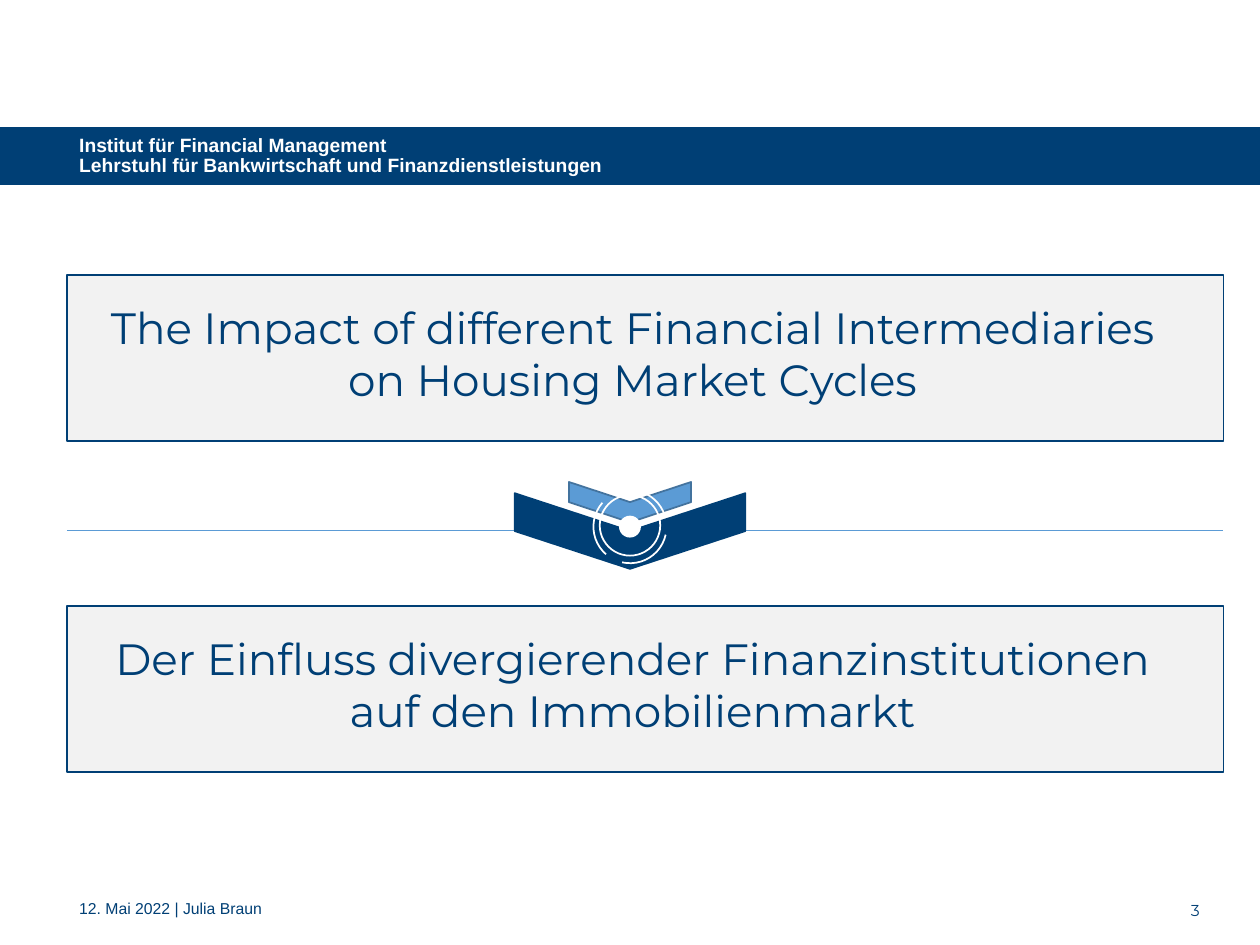
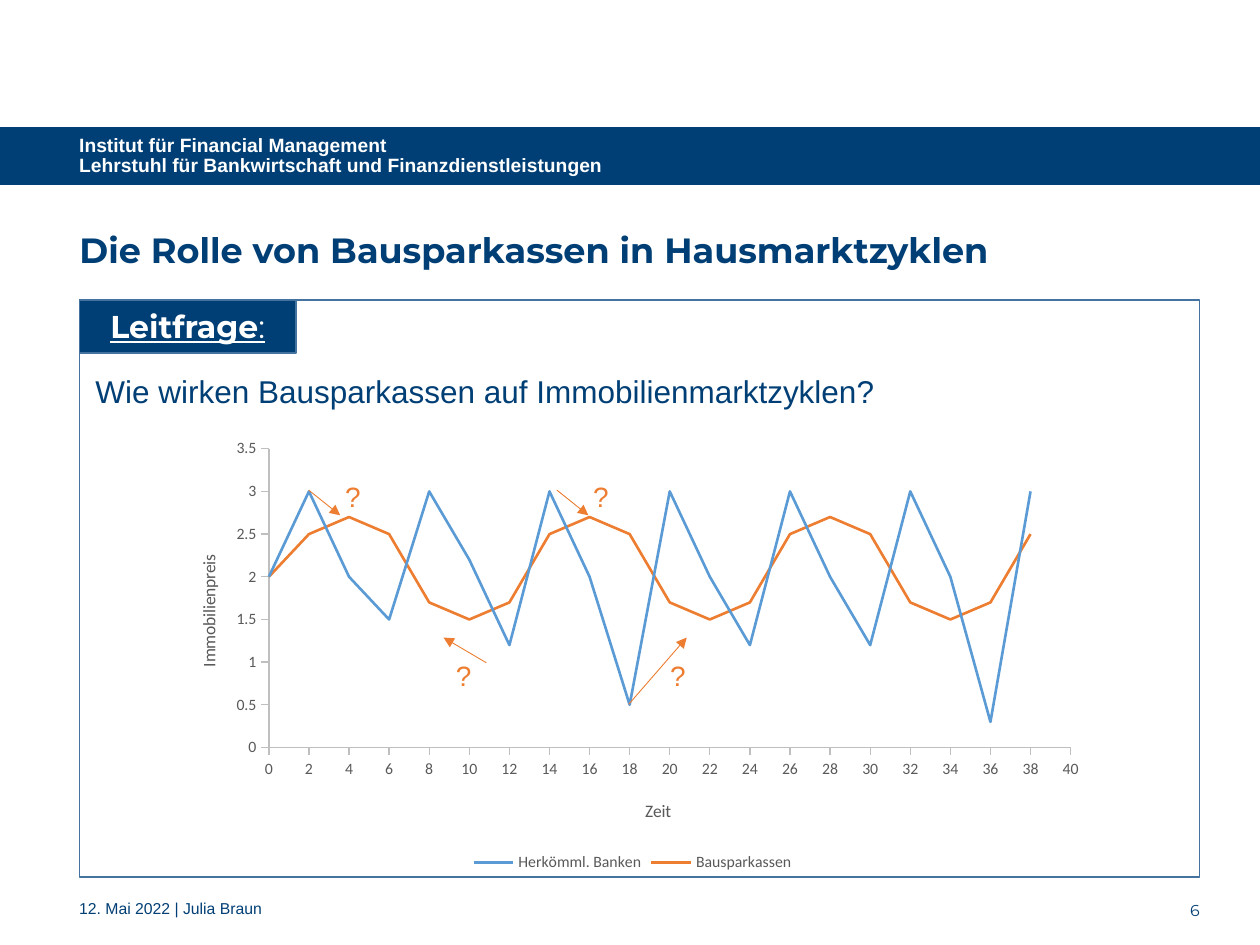
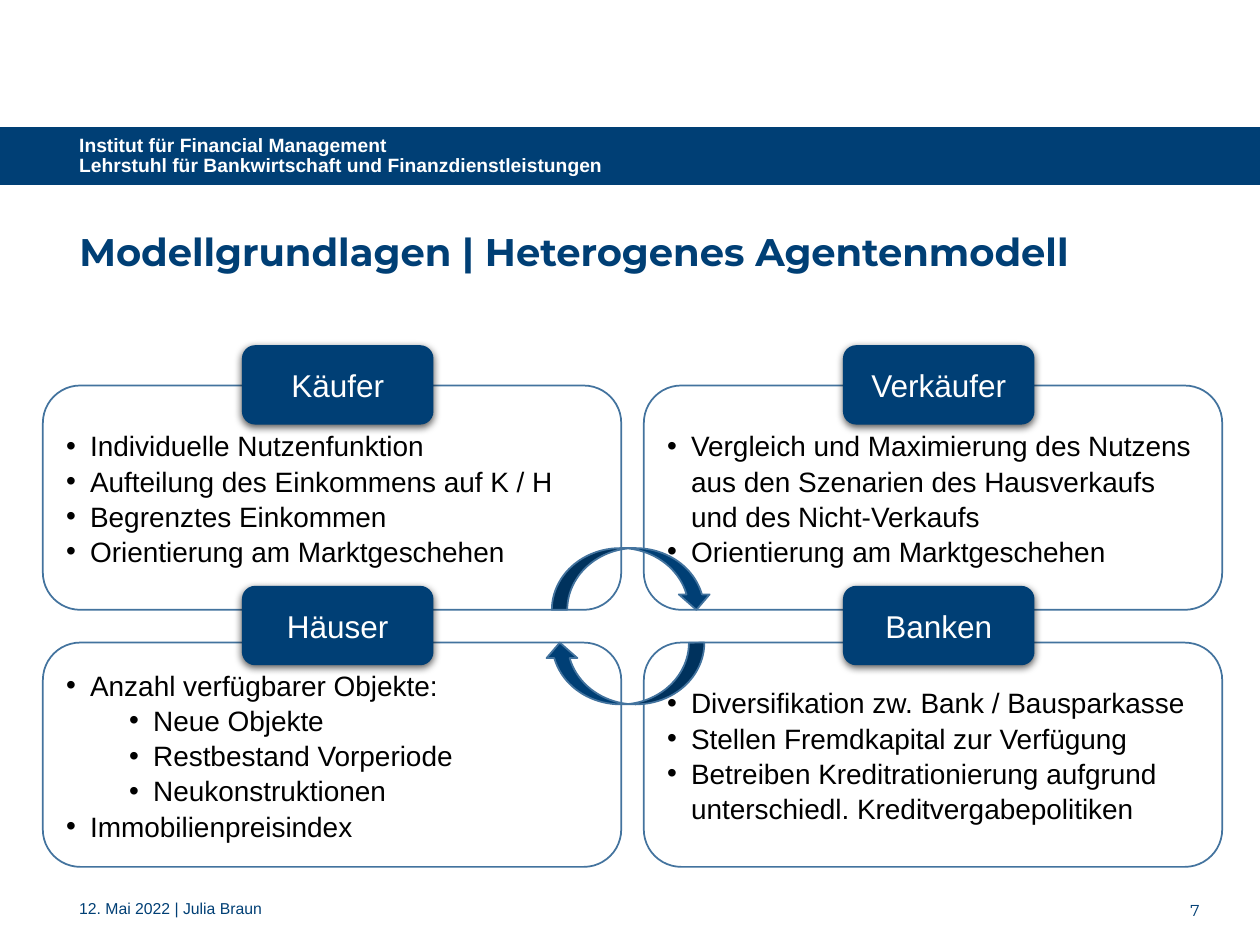
import pptx
import pptx.chart.data
import pptx.dml.color
import pptx.enum.chart
import pptx.enum.shapes
import pptx.enum.text
import pptx.oxml
import pptx.oxml.ns
import pptx.oxml.xmlchemy
import pptx.util

Inches = pptx.util.Inches
Pt = pptx.util.Pt
RGBColor = pptx.dml.color.RGBColor
SHAPE = pptx.enum.shapes.MSO_SHAPE
ANCHOR = pptx.enum.text.MSO_ANCHOR
ALIGN = pptx.enum.text.PP_ALIGN
CHART = pptx.enum.chart

NAVY = RGBColor(0x00, 0x3F, 0x75)
BLUE = RGBColor(0x5B, 0x9B, 0xD5)
EDGE = RGBColor(0x43, 0x73, 0x9E)
ORANGE = RGBColor(0xED, 0x7D, 0x31)
PALE = RGBColor(0xF2, 0xF2, 0xF2)
GREY = RGBColor(0x59, 0x59, 0x59)
AXIS = RGBColor(0xBF, 0xBF, 0xBF)
WHITE = RGBColor(0xFF, 0xFF, 0xFF)
BLACK = RGBColor(0x00, 0x00, 0x00)

TITLE_SLIDE, TITLE_ONLY = 0, 5
INSTITUTE = ["Institut für Financial Management",
             "Lehrstuhl für Bankwirtschaft und Finanzdienstleistungen"]
FOOTER = "12. Mai 2022 | Julia Braun"


def apply(obj, values):
    for name, value in values.items():
        setattr(obj, name, value)


def style_font(font, color, size, name="Arial", **values):
    apply(font, dict(values, name=name, size=Pt(size)))
    font.color.rgb = color


def add_xml(parent, tag, **attrs):
    el = pptx.oxml.xmlchemy.OxmlElement(tag)
    for name, value in attrs.items():
        el.set(name, str(value))
    parent.append(el)
    return el


def set_layout(el, index, **values):
    old = el.find(pptx.oxml.ns.qn("c:layout"))
    if old is not None:
        el.remove(old)
    layout = pptx.oxml.xmlchemy.OxmlElement("c:layout")
    manual = add_xml(layout, "c:manualLayout")
    for name, value in values.items():
        add_xml(manual, f"c:{name}", val=value)
    el.insert(index, layout)


class Deck:
    def __init__(self):
        self.prs = pptx.Presentation()
        apply(self.prs, {"slide_width": Inches(10), "slide_height": Inches(7.5)})
        self.s = None

    def slide(self, layout, number):
        self.s = self.prs.slides.add_slide(self.prs.slide_layouts[layout])
        self.shape(SHAPE.RECTANGLE, (0, 1.01, 10, 0.45), NAVY, NAVY, 0.75)
        self.text((0.53, 1.01, 8.98, 0.46), INSTITUTE, WHITE, 11, bold=True,
                  anchor=ANCHOR.MIDDLE, spacing=0.9)
        self.text((0.53, 7.1, 8.09, 0.26), [FOOTER], NAVY, 9, spacing=0.9)
        self.text((8.91, 7.1, 0.71, 0.25), [number], NAVY, 9, name="Montserrat",
                  align=ALIGN.RIGHT)

    def set_lines(self, tf, lines, color, size, anchor=ANCHOR.TOP, align=ALIGN.LEFT,
                  spacing=1.0, **font):
        apply(tf, {"word_wrap": True, "vertical_anchor": anchor,
                   "auto_size": pptx.enum.text.MSO_AUTO_SIZE.NONE})
        for i, line in enumerate(lines):
            p = tf.paragraphs[0] if i == 0 else tf.add_paragraph()
            apply(p, {"alignment": align, "line_spacing": spacing,
                      "space_before": Pt(0), "space_after": Pt(0)})
            r = p.add_run()
            r.text = line
            style_font(r.font, color, size, **font)

    def text(self, box, lines, color, size, **style):
        sp = self.s.shapes.add_textbox(*map(Inches, box))
        self.set_lines(sp.text_frame, lines, color, size, **style)

    def placeholder(self, index, box, line, size, **style):
        sp = self.s.placeholders[index]
        apply(sp, dict(zip(("left", "top", "width", "height"), map(Inches, box))))
        self.set_lines(sp.text_frame, [line], NAVY, size, name="Montserrat", **style)
        self.s.shapes._spTree.append(sp._element)

    def title(self, line, size):
        self.placeholder(0, (0.53, 1.76, 8.98, 0.63), line, size, bold=True)

    def shape(self, kind, box, fill=None, line=None, width=1, rotation=0):
        sp = self.s.shapes.add_shape(kind, *map(Inches, box))
        sp.shadow.inherit = False
        sp.rotation = rotation
        if fill is None:
            sp.fill.background()
        else:
            sp.fill.solid()
            sp.fill.fore_color.rgb = fill
        if line is None:
            sp.line.fill.background()
        else:
            sp.line.color.rgb = line
            sp.line.width = Pt(width)
        return sp

    def line(self, start, end, color, arrow=False):
        c = self.s.shapes.add_connector(pptx.enum.shapes.MSO_CONNECTOR.STRAIGHT,
                                        *map(Inches, start + end))
        c.line.color.rgb = color
        c.line.width = Pt(0.5)
        if arrow:
            add_xml(c.line._get_or_add_ln(), "a:tailEnd", type="triangle")
        add_xml(c._element.spPr, "a:effectLst")

    def label(self, box, line):
        sp = self.shape(SHAPE.ROUNDED_RECTANGLE, box, NAVY)
        effects = sp._element.spPr.find(pptx.oxml.ns.qn("a:effectLst"))
        shadow = add_xml(effects, "a:outerShdw", blurRad=Pt(4.5), dist=Pt(1.5),
                         dir=5400000, algn="ctr", rotWithShape=0)
        add_xml(add_xml(shadow, "a:srgbClr", val=BLACK), "a:alpha", val=63000)
        self.set_lines(sp.text_frame, [line], WHITE, 18, anchor=ANCHOR.MIDDLE,
                       align=ALIGN.CENTER)

    def bullets(self, box, items):
        sp = self.shape(SHAPE.ROUNDED_RECTANGLE, box, line=EDGE)
        self.set_lines(sp.text_frame, [line for _, line in items], BLACK, 16,
                       anchor=ANCHOR.MIDDLE, spacing=1.05)
        for p, (level, _) in zip(sp.text_frame.paragraphs, items):
            p.level = level
            pPr = p._p.get_or_add_pPr()
            pPr.set("marL", str(Inches(0.19 + 0.5 * level)))
            pPr.set("indent", str(Inches(-0.19)))
            add_xml(pPr, "a:buFont", typeface="Arial")
            add_xml(pPr, "a:buChar", char="•")

    def axis(self, axis, title, limit, step, x, y):
        apply(axis, {"minimum_scale": 0, "maximum_scale": limit, "major_unit": step,
                     "has_major_gridlines": False,
                     "major_tick_mark": CHART.XL_TICK_MARK.OUTSIDE,
                     "minor_tick_mark": CHART.XL_TICK_MARK.NONE})
        apply(axis.tick_labels, {"number_format": "General",
                                 "number_format_is_linked": False})
        style_font(axis.tick_labels.font, GREY, 9, "Calibri")
        axis.format.line.color.rgb = AXIS
        axis.format.line.width = Pt(0.75)
        tf = axis.axis_title.text_frame
        tf.text = title
        style_font(tf.paragraphs[0].runs[0].font, GREY, 10, "Calibri", bold=False)
        set_layout(axis.axis_title._element, 1, xMode="edge", yMode="edge", x=x, y=y)
        return tf

    def curves(self, box, xs, series):
        data = pptx.chart.data.XyChartData()
        for name, values, _ in series:
            line = data.add_series(name)
            for x, y in zip(xs, values):
                line.add_data_point(x, y)
        chart = self.s.shapes.add_chart(
            CHART.XL_CHART_TYPE.XY_SCATTER_SMOOTH_NO_MARKERS,
            *map(Inches, box), data).chart
        style_font(chart.font, BLACK, 10, "Calibri")
        apply(chart, {"has_title": False, "has_legend": True})
        apply(chart.legend, {"position": CHART.XL_LEGEND_POSITION.BOTTOM,
                             "include_in_layout": False})
        style_font(chart.legend.font, GREY, 9, "Calibri")
        chart.plots[0].vary_by_categories = False
        for line, (_, _, color) in zip(chart.plots[0].series, series):
            line.smooth = True
            line.marker.style = CHART.XL_MARKER_STYLE.NONE
            line.format.line.color.rgb = color
            line.format.line.width = Pt(1.5)
        self.axis(chart.category_axis, "Zeit", 40, 2, 0.51, 0.82)
        tf = self.axis(chart.value_axis, "Immobilienpreis", 3.5, 0.5, 0.03, 0.27)
        bodyPr = tf._txBody.bodyPr
        bodyPr.set("rot", "-5400000")
        bodyPr.set("vert", "horz")
        set_layout(chart._chartSpace.chart.plotArea, 0, layoutTarget="inner",
                   xMode="edge", yMode="edge", x=0.11, y=0.04, w=0.86, h=0.67)


def topic_slide(deck):
    deck.slide(TITLE_SLIDE, "3")
    deck.line((0.53, 4.21), (9.71, 4.21), BLUE)
    topics = ["The Impact of different Financial Intermediaries on Housing Market Cycles",
              "Der Einfluss divergierender Finanzinstitutionen auf den Immobilienmarkt"]
    for i, topic in enumerate(topics):
        top = 2.18 + 2.63 * i
        deck.shape(SHAPE.RECTANGLE, (0.53, top, 9.18, 1.32), PALE, NAVY)
        deck.placeholder(i, (0.53, top - 0.04, 8.98, 1.32), topic, 25,
                         anchor=ANCHOR.MIDDLE, align=ALIGN.CENTER)
    deck.shape(SHAPE.CHEVRON, (4.7, 3.3, 0.6, 1.83), NAVY, NAVY, rotation=90)
    deck.shape(SHAPE.CHEVRON, (4.84, 3.5, 0.32, 0.97), BLUE, EDGE, rotation=90)
    for rotation in (220.9, 342.5, 102.6):
        deck.shape(SHAPE.ARC, (4.71, 3.89, 0.58, 0.58), line=WHITE, rotation=rotation)
    deck.shape(SHAPE.OVAL, (4.76, 3.93, 0.48, 0.48), line=WHITE)
    deck.shape(SHAPE.OVAL, (4.92, 4.1, 0.16, 0.16), WHITE, WHITE)


def cycle_slide(deck):
    deck.slide(TITLE_ONLY, "6")
    deck.title("Die Rolle von Bausparkassen in Hausmarktzyklen", 20)
    deck.text((0.66, 2.9, 8.74, 0.4), ["Wie wirken Bausparkassen auf Immobilienmarktzyklen?"],
              NAVY, 18, anchor=ANCHOR.MIDDLE)
    banks = [2, 3, 2, 1.5, 3, 2.2, 1.2, 3, 2, 0.5, 3, 2, 1.2, 3, 2, 1.2, 3, 2, 0.3, 3]
    savings = [2] + ([2.5, 2.7, 2.5, 1.7, 1.5, 1.7] * 4)[:19]
    deck.curves((1.32, 3.42, 7.4, 3.54), range(0, 40, 2),
                [("Herkömml. Banken", banks, BLUE), ("Bausparkassen", savings, ORANGE)])
    shifts = [((2.45, 3.89), (2.7, 4.09), (2.64, 3.76)),
              ((4.42, 3.89), (4.67, 4.09), (4.61, 3.76)),
              ((3.86, 5.26), (3.52, 5.06), (3.52, 5.18)),
              ((4.99, 5.59), (5.45, 5.06), (5.22, 5.18))]
    for start, end, mark in shifts:
        deck.line(start, end, ORANGE, arrow=True)
        deck.text(mark + (0.33, 0.37), ["?"], ORANGE, 16)
    sp = deck.shape(SHAPE.RECTANGLE, (0.63, 2.38, 1.72, 0.42), NAVY, EDGE)
    deck.set_lines(sp.text_frame, ["Leitfrage"], WHITE, 18, anchor=ANCHOR.MIDDLE,
                   align=ALIGN.CENTER, name="Montserrat", bold=True, underline=True)
    r = sp.text_frame.paragraphs[0].add_run()
    r.text = ":"
    style_font(r.font, WHITE, 18, "Montserrat", bold=False, underline=True)
    deck.shape(SHAPE.RECTANGLE, (0.63, 2.38, 8.89, 4.58), line=EDGE)


def agent_slide(deck):
    deck.slide(TITLE_ONLY, "7")
    deck.title("Modellgrundlagen | Heterogenes Agentenmodell", 22)
    agents = [
        ("Käufer", [(0, "Individuelle Nutzenfunktion"),
                    (0, "Aufteilung des Einkommens auf K / H"),
                    (0, "Begrenztes Einkommen"),
                    (0, "Orientierung am Marktgeschehen")]),
        ("Verkäufer", [(0, "Vergleich und Maximierung des Nutzens aus den Szenarien "
                           "des Hausverkaufs und des Nicht-Verkaufs"),
                       (0, "Orientierung am Marktgeschehen")]),
        ("Häuser", [(0, "Anzahl verfügbarer Objekte:"),
                    (1, "Neue Objekte"),
                    (1, "Restbestand Vorperiode"),
                    (1, "Neukonstruktionen"),
                    (0, "Immobilienpreisindex")]),
        ("Banken", [(0, "Diversifikation zw. Bank / Bausparkasse"),
                    (0, "Stellen Fremdkapital zur Verfügung"),
                    (0, "Betreiben Kreditrationierung aufgrund unterschiedl. "
                        "Kreditvergabepolitiken")]),
    ]
    for i, (name, items) in enumerate(agents):
        row, col = divmod(i, 2)
        left = 0.34 + 4.77 * col
        deck.bullets((left, 3.06 + 2.04 * row, 4.59, 1.78), items)
        deck.label((left + 1.58, 2.74 + 1.91 * row, 1.52, 0.63), name)
    for left, top, rotation in ((4.38, 4.35, 0), (4.32, 5.1, 180)):
        deck.shape(SHAPE.CURVED_DOWN_ARROW, (left, top, 1.27, 0.49), NAVY, EDGE,
                   rotation=rotation)


def main():
    deck = Deck()
    topic_slide(deck)
    cycle_slide(deck)
    agent_slide(deck)
    deck.prs.save("out.pptx")


if __name__ == "__main__":
    main()
